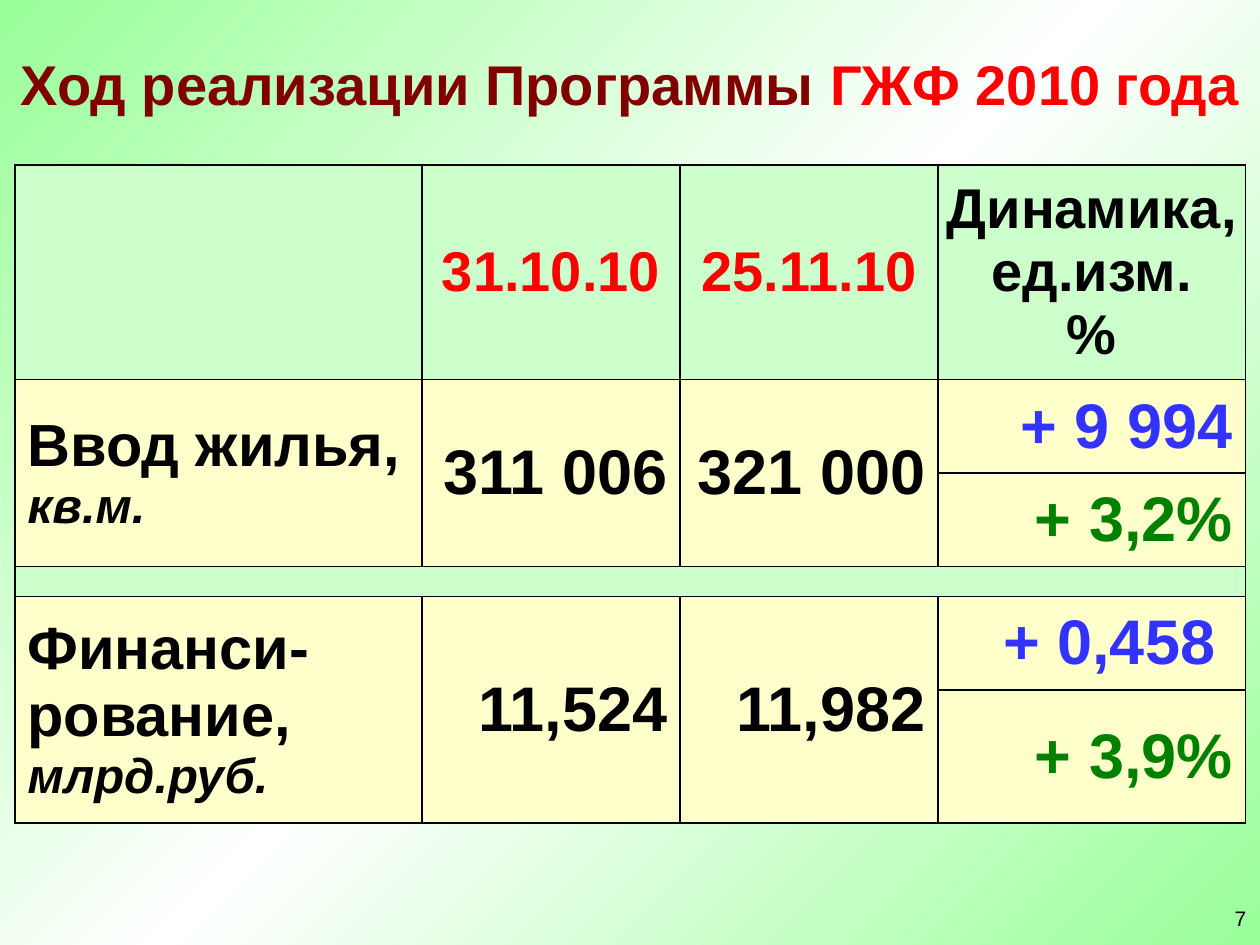
from copy import deepcopy

from lxml.etree import SubElement
from pptx import Presentation
from pptx.dml.color import RGBColor
from pptx.enum.text import MSO_ANCHOR, PP_ALIGN
from pptx.oxml.ns import qn
from pptx.util import Pt

BLACK, RED, MAROON = "000000", "FF0000", "800000"
BLUE, GREEN = "3333FF", "008000"
MINT, CREAM = "CCFFCC", "FFFFCC"
COLUMNS = [232.5, 147.5, 147.5, 175.5]
ROWS = [122.5, 53.5, 53.5, 17, 53.5, 76]


def color(value):
    return RGBColor.from_string(value)


class SlideBuilder:
    """Holds the style and the current slide, and adds elements to it."""

    font = "Arial"

    def __init__(self, slide):
        self.slide = slide

    def background(self, stops, angle):
        fill = self.slide.background.fill
        fill.gradient()
        fill.gradient_angle = angle
        stop_list = next(self.slide.element.iter(qn("a:gsLst")))
        stop_list.insert(1, deepcopy(stop_list[0]))
        for stop, (position, value) in zip(fill.gradient_stops, stops):
            stop.position = position
            stop.color.rgb = color(value)

    def add_paragraphs(self, frame, paragraphs, align):
        for index, runs in enumerate(paragraphs):
            paragraph = frame.add_paragraph() if index else frame.paragraphs[0]
            paragraph.alignment = align
            for text, size, value, bold, italic in runs:
                run = paragraph.add_run()
                run.text = text
                run.font.name = self.font
                run.font.size = Pt(size)
                run.font.bold = bold
                run.font.italic = italic
                run.font.color.rgb = color(value)

    def text(self, box, paragraphs, align, wrap=True, top=3.6):
        shape = self.slide.shapes.add_textbox(*map(Pt, box))
        shape.text_frame.word_wrap = wrap
        shape.text_frame.margin_top = Pt(top)
        self.add_paragraphs(shape.text_frame, paragraphs, align)

    def table(self, left, top, columns, rows):
        shape = self.slide.shapes.add_table(
            len(rows), len(columns), Pt(left), Pt(top), Pt(sum(columns)), Pt(sum(rows)))
        table = shape.table
        for column, width in zip(table.columns, columns):
            column.width = Pt(width)
        for row, height in zip(table.rows, rows):
            row.height = Pt(height)
        return table

    def style_cell(self, cell, fill):
        properties = cell._tc.get_or_add_tcPr()
        for side in ("a:lnL", "a:lnR", "a:lnT", "a:lnB"):
            line = SubElement(properties, qn(side), w=str(Pt(1)))
            solid = SubElement(line, qn("a:solidFill"))
            SubElement(solid, qn("a:srgbClr"), val=BLACK)
        cell.fill.solid()
        cell.fill.fore_color.rgb = color(fill)
        cell.vertical_anchor = MSO_ANCHOR.MIDDLE

    def shrink_empty(self, cell, size):
        paragraph = cell.text_frame.paragraphs[0]
        SubElement(paragraph._p, qn("a:endParaRPr"), sz=str(size * 100))


def bold(text, size, value=BLACK, italic=False):
    return text, size, value, True, italic


def build_table(builder):
    table = builder.table(8.64, 94.3, COLUMNS, ROWS)
    for row in range(len(ROWS)):
        for column in range(len(COLUMNS)):
            builder.style_cell(table.cell(row, column), MINT if row in (0, 3) else CREAM)

    header = [
        [[bold("31.10.10", 32, RED)]],
        [[bold("25.11.10", 32, RED)]],
        [[bold("Динамика, ед.изм.", 32)], [bold("%", 32)]],
    ]
    for column, paragraphs in enumerate(header, 1):
        builder.add_paragraphs(table.cell(0, column).text_frame, paragraphs, PP_ALIGN.CENTER)
    dynamics = table.cell(0, 3)
    dynamics.margin_left = dynamics.margin_right = Pt(3)

    for column in range(len(COLUMNS)):
        builder.shrink_empty(table.cell(3, column), 8)
    table.cell(3, 0).merge(table.cell(3, 3))

    indicators = [
        (1, [[bold("Ввод жилья,", 34)], [bold("кв.м.", 28, italic=True)]],
         ["311 006", "321 000"], "+ 9 994", "+ 3,2%"),
        (4, [[bold("Финанси-рование, ", 34), bold("млрд.руб.", 28, italic=True)]],
         ["11,524", "11,982"], "+ 0,458 ", "+ 3,9%"),
    ]
    for row, label, values, change, percent in indicators:
        for column in range(3):
            table.cell(row, column).merge(table.cell(row + 1, column))
        builder.add_paragraphs(table.cell(row, 0).text_frame, label, PP_ALIGN.LEFT)
        numbers = [(row, column, value, BLACK) for column, value in enumerate(values, 1)]
        numbers += [(row, 3, change, BLUE), (row + 1, 3, percent, GREEN)]
        for line, column, value, shade in numbers:
            builder.add_paragraphs(table.cell(line, column).text_frame,
                                   [[bold(value, 36, shade)]], PP_ALIGN.RIGHT)


def main():
    presentation = Presentation()
    presentation.slide_width, presentation.slide_height = Pt(720), Pt(540)
    builder = SlideBuilder(presentation.slides.add_slide(presentation.slide_layouts[6]))
    builder.background([(0, "99FF99"), (0.5, "FFFFFF"), (1, "99FF99")], 315)
    builder.text((698.4, 514, 20.9, 21.6), [[("7", 12, BLACK, False, False)]],
                 PP_ALIGN.LEFT, wrap=False)
    builder.text((0, 20.2, 720, 73.4),
                 [[bold("Ход реализации Программы ", 32, MAROON),
                   bold("ГЖФ 2010 года", 32, RED)]], PP_ALIGN.CENTER, top=8)
    build_table(builder)
    presentation.save("out.pptx")


if __name__ == "__main__":
    main()
